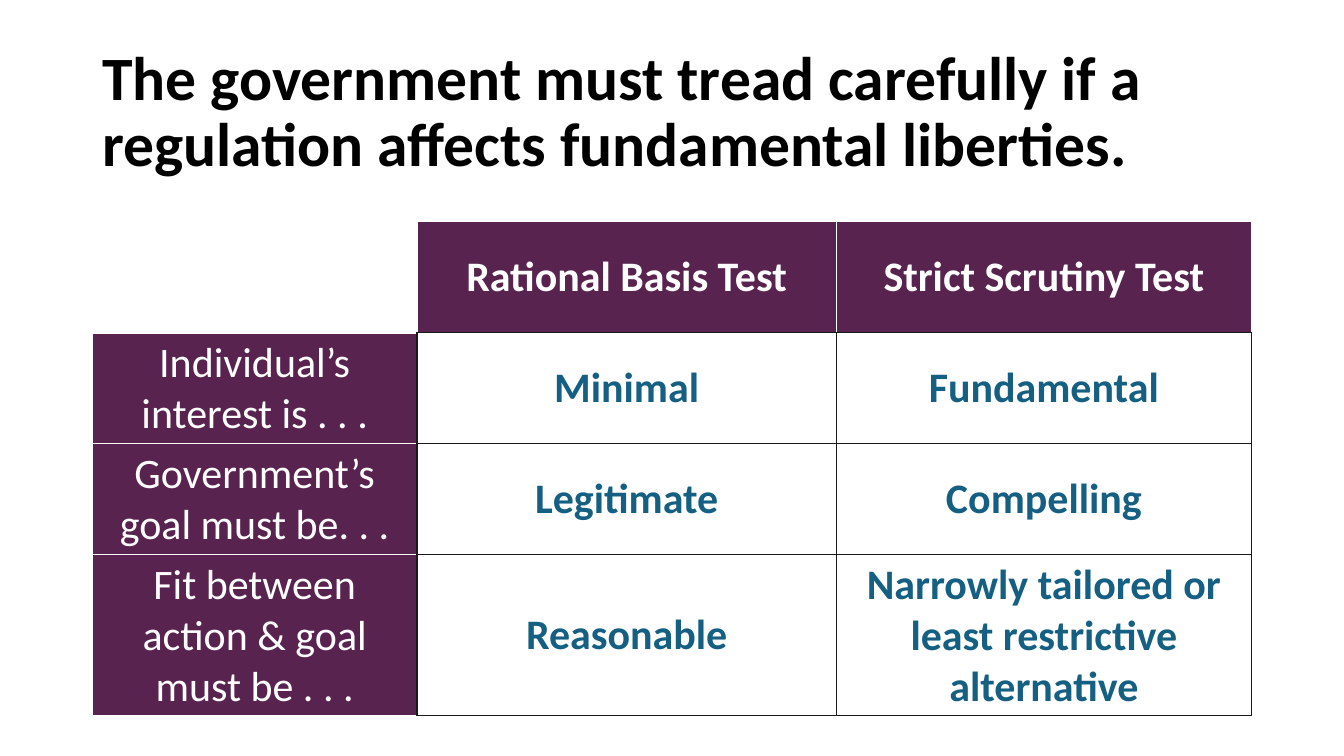
from lxml.etree import SubElement
from pptx import Presentation
from pptx.dml.color import RGBColor
from pptx.enum.text import MSO_ANCHOR as ANCHOR, PP_ALIGN as ALIGN
from pptx.oxml.ns import qn
from pptx.util import Cm, Pt

PLUM = RGBColor(0x59, 0x23, 0x4F)
TEAL = RGBColor(0x15, 0x60, 0x82)
WHITE = RGBColor(0xFF, 0xFF, 0xFF)
BLACK = RGBColor(0, 0, 0)
INK = RGBColor(0x1A, 0x1A, 0x1A)

TITLE = "The government must tread carefully if a regulation affects fundamental liberties."
TESTS = [
    ["", "Rational Basis Test", "Strict Scrutiny Test"],
    ["Individual’s interest is . . .", "Minimal", "Fundamental"],
    ["Government’s goal must be. . .", "Legitimate", "Compelling"],
    ["Fit between action & goal must be . . .", "Reasonable",
     "Narrowly tailored or least restrictive alternative"],
]
COL_WIDTHS = [8.18, 10.57, 10.46]
ROW_HEIGHTS = [2.79, 2.79, 2.79, 3.68]


def write(p, text, color, **formats):
    """Add one run of text to a paragraph."""
    r = p.add_run()
    r.text = text
    r.font.color.rgb = color
    for name, value in {"name": "Calibri", **formats}.items():
        setattr(r.font, name, value)


def set_borders(cell, borders):
    """Draw the cell's sides from (side, colour, points) entries."""
    tcPr = cell._tc.get_or_add_tcPr()
    for side, color, points in borders:
        ln = SubElement(tcPr, qn(f"a:ln{side}"), w=str(Pt(points)))
        fill = SubElement(ln, qn("a:solidFill"))
        SubElement(fill, qn("a:srgbClr"), val=str(color))


def cell_borders(row, col):
    """Return the side entries for a cell at the given grid position."""
    header, label = row == 0, col == 0
    edge = WHITE if header or label else INK
    return [
        ("L", WHITE if header or label else INK, 1),
        ("R", WHITE if header else INK, 1),
        ("T", edge, 3 if label and row == 1 else 1),
        ("B", WHITE if label else INK, 3 if header and label else 1),
    ]


def add_title(slide, left, top, width, height):
    """Place the headline in the given box."""
    tf = slide.shapes.add_textbox(left, top, width, height).text_frame
    tf.word_wrap = True
    tf.vertical_anchor = ANCHOR.MIDDLE
    p = tf.paragraphs[0]
    p.line_spacing = 0.9
    write(p, TITLE, BLACK, size=Pt(44), bold=True)


def add_tests_table(slide, left, top, width, height):
    """Place the table comparing the two tests in the given box."""
    table = slide.shapes.add_table(
        len(TESTS), len(TESTS[0]), left, top, width, height).table
    for name in ("first_row", "horz_banding"):
        setattr(table, name, False)
    for column, share in zip(table.columns, COL_WIDTHS):
        column.width = int(width * share / sum(COL_WIDTHS))
    for table_row, share in zip(table.rows, ROW_HEIGHTS):
        table_row.height = int(height * share / sum(ROW_HEIGHTS))

    for row, texts in enumerate(TESTS):
        for col, text in enumerate(texts):
            cell = table.cell(row, col)
            heading = (row == 0) != (col == 0)
            set_borders(cell, cell_borders(row, col))
            cell.fill.solid()
            cell.fill.fore_color.rgb = PLUM if heading else WHITE
            cell.vertical_anchor = ANCHOR.MIDDLE
            if text:
                p = cell.text_frame.paragraphs[0]
                p.alignment = ALIGN.CENTER
                write(p, text, WHITE if heading else TEAL,
                      size=Pt(30), bold=col > 0)


def main():
    """Build and save the slide."""
    prs = Presentation()
    prs.slide_width, prs.slide_height = Cm(33.87), Cm(19.05)
    s = prs.slides.add_slide(prs.slide_layouts[6])
    left, width = Cm(2.33), Cm(29.21)
    add_title(s, left, Cm(1.02), width, Cm(3.68))
    add_tests_table(s, left, Cm(5.59), width, Cm(12.05))
    prs.save("out.pptx")


if __name__ == "__main__":
    main()
